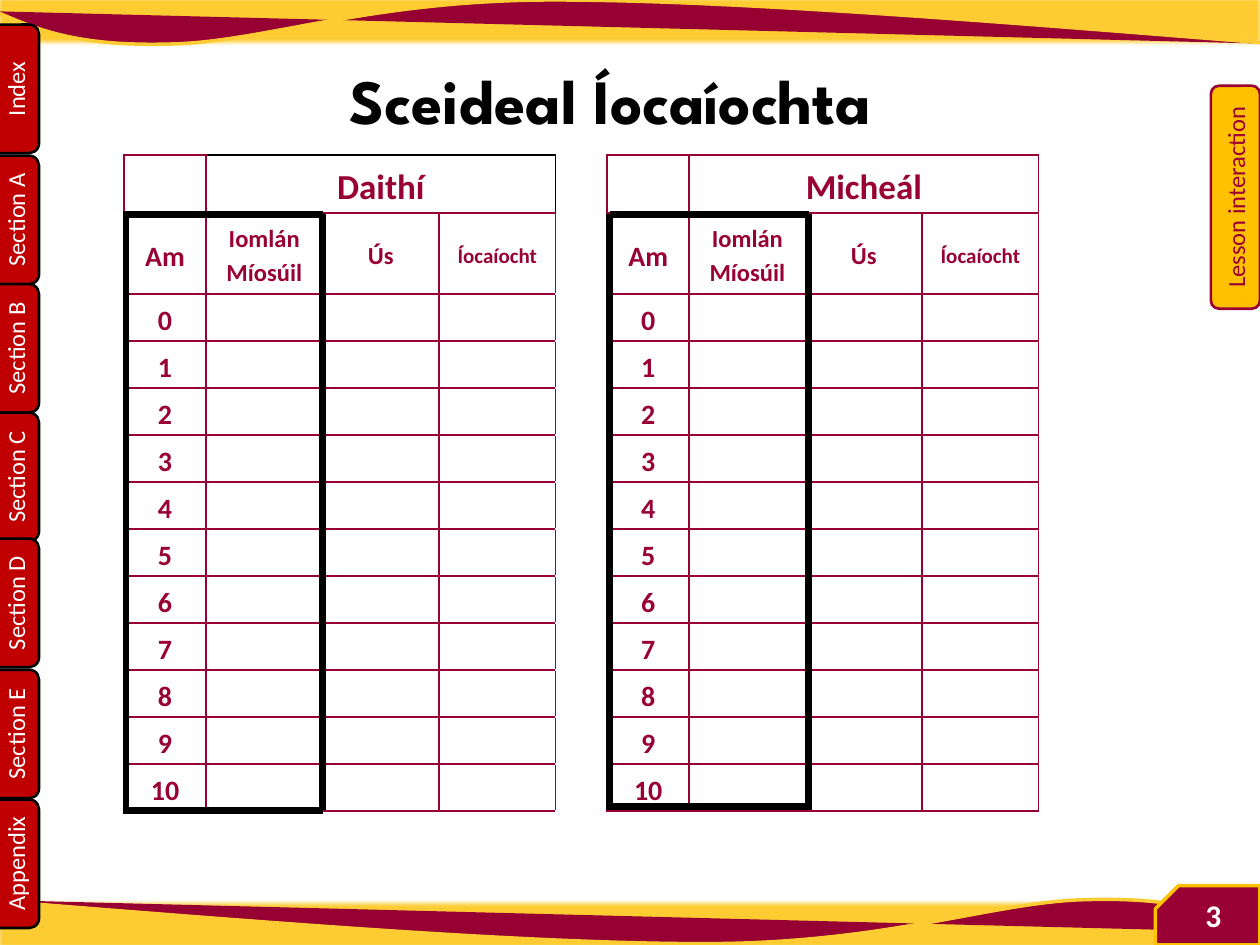
from lxml import etree
from pptx import Presentation
from pptx import util as u
from pptx.dml import color
from pptx.enum import shapes, text
from pptx.oxml import ns

COLUMNS, ROWS = 100, 75
CELL = u.Inches(10) // COLUMNS

MAROON = color.RGBColor(0x99, 0x00, 0x33)
WINE = color.RGBColor(0x97, 0x00, 0x33)
GOLD = color.RGBColor(0xFD, 0xCC, 0x33)
AMBER = color.RGBColor(0xFF, 0xC0, 0x00)
RED = color.RGBColor(0xC0, 0x00, 0x00)
BLACK = color.RGBColor(0x00, 0x00, 0x00)
WHITE = color.RGBColor(0xFF, 0xFF, 0xFF)

TABS = {"Index": 4.7, "Section A": 15.1, "Section B": 25.3, "Section C": 35.5,
        "Section D": 45.5, "Section E": 55.9, "Appendix": 66.2}
NAMES = ["Daithí", "Micheál"]
HEADINGS = [("Am", 16), ("Iomlán Míosúil", 14), ("Ús", 14), ("Íocaíocht", 12)]
TIMES = range(11)
GAP_COLUMN = len(HEADINGS)
BLOCK_STARTS = [0, GAP_COLUMN + 1]
BLOCK_WIDTHS = [6.5, 9.25, 9.25, 9.25]
GAP_WIDTH = 4.1
TABLE_HEIGHT = 52.1
HEADER_HEIGHTS = [4.6, 6.45]
BLACK_EDGES = {(0, 1, "T"), (0, 2, "T"), (0, 3, "T"), (0, 3, "R"), (0, GAP_COLUMN, "L")}

WAVE = [
    (101.5, 3.5),
    (80.1, 1.8), (58.6, 0), (43.9, 0),
    (29.2, 0), (20.8, 3.4), (13.4, 3.5),
    (6, 3.7), (2.8, 2.3), (-0.4, 0.9),
]


def grid(*cells):
    return [round(cell * CELL) for cell in cells]


def set_all(target, values):
    for name, value in values.items():
        setattr(target, name, value)


def paint(shape, fill, line=None, weight=1):
    shape.shadow.inherit = False
    shape.fill.solid()
    shape.fill.fore_color.rgb = fill
    if line is None:
        shape.line.fill.background()
    else:
        shape.line.color.rgb = line
        shape.line.width = u.Pt(weight)


def write(frame, words, size, ink, bold=False, font="Calibri", spacing=None):
    para = frame.paragraphs[0]
    set_all(para, {"alignment": text.PP_ALIGN.CENTER, "line_spacing": spacing})
    span = para.add_run()
    span.text = words
    set_all(span.font, {"name": font, "size": u.Pt(size), "bold": bold})
    span.font.color.rgb = ink


def add_box(page, kind, place, fill, line=None, weight=1, rotation=0):
    box = page.shapes.add_shape(kind, *grid(*place))
    box.rotation = rotation
    paint(box, fill, line, weight)
    return box


def add_label(page, place, words, anchor, ink, fill, line):
    box = add_box(page, shapes.MSO_SHAPE.ROUNDED_RECTANGLE, place, fill, line, 1.5, 270)
    set_all(box.text_frame, {"vertical_anchor": anchor, "word_wrap": True})
    write(box.text_frame, words, 14, ink)


def curve_segments(shape):
    segments = list(shape._element.iter(ns.qn("a:lnTo")))
    for first in range(0, len(segments), 3):
        curve = etree.Element(ns.qn("a:cubicBezTo"))
        segments[first].addprevious(curve)
        for segment in segments[first:first + 3]:
            curve.append(segment[0])
            segment.getparent().remove(segment)


def add_wave(page, turned):
    top = ROWS - 3.7 if turned else -0.5
    band = add_box(page, shapes.MSO_SHAPE.RECTANGLE, (-0.4, top, COLUMNS + 0.8, 4.2), GOLD)
    effects = band._element.spPr.find(ns.qn("a:effectLst"))
    etree.SubElement(effects, ns.qn("a:softEdge"), rad=str(u.Pt(2.5)))
    points = [(COLUMNS - 0.2 - x, ROWS - 0.1 - y) if turned else (x, y) for x, y in WAVE]
    points = [grid(*point) for point in points]
    builder = page.shapes.build_freeform(*points[0])
    builder.add_line_segments(points[1:], close=False)
    wave = builder.convert_to_shape()
    curve_segments(wave)
    paint(wave, WINE, GOLD, 2)


def add_line(page, start, end):
    line = page.shapes.add_connector(shapes.MSO_CONNECTOR.STRAIGHT, *grid(*start, *end))
    line.line.color.rgb = BLACK
    line.line.width = u.Pt(4)
    etree.SubElement(line._element.spPr, ns.qn("a:effectLst"))


def add_frame(page, left, edge, top, right, base, bottom):
    add_line(page, (left, top), (right, top))
    add_line(page, (left, base), (right, base))
    add_line(page, (edge, top), (edge, bottom))
    add_line(page, (right, top), (right, bottom))


def border(cell, side, ink):
    properties = cell._tc.get_or_add_tcPr()
    line = etree.SubElement(properties, ns.qn(f"a:ln{side}"), w=str(u.Pt(1)))
    fill = etree.SubElement(line, ns.qn("a:solidFill"))
    etree.SubElement(fill, ns.qn("a:srgbClr"), val=str(ink))


def format_cells(table):
    for row_index, row in enumerate(table.rows):
        for index, cell in enumerate(row.cells):
            for side in "LR" if index == GAP_COLUMN else "LRTB":
                border(cell, side, BLACK if (row_index, index, side) in BLACK_EDGES else MAROON)
            cell.fill.background()
            set_all(cell, {
                "margin_left": u.Inches(0.07), "margin_right": u.Inches(0.07),
                "margin_top": u.Inches(0.01), "margin_bottom": 0,
                "vertical_anchor": text.MSO_ANCHOR.MIDDLE,
            })
            cell.text_frame.paragraphs[0].font.size = u.Pt(14)


def fill_block(table, start, name):
    entries = [(0, start + 1, name, 20)]
    entries += [(1, start + i, words, size) for i, (words, size) in enumerate(HEADINGS)]
    entries += [(2 + time, start, str(time), 16) for time in TIMES]
    for row, column, words, size in entries:
        write(table.cell(row, column).text_frame, words, size, MAROON, True, spacing=1.15)
    table.cell(0, start + 1).merge(table.cell(0, start + len(HEADINGS) - 1))


def add_schedule(page):
    widths = BLOCK_WIDTHS + [GAP_WIDTH] + BLOCK_WIDTHS
    time_height = (TABLE_HEIGHT - sum(HEADER_HEIGHTS)) / len(TIMES)
    heights = HEADER_HEIGHTS + [time_height] * len(TIMES)
    place = grid(9.85, 12.3, sum(widths), TABLE_HEIGHT)
    table = page.shapes.add_table(len(heights), len(widths), *place).table
    set_all(table, {"first_row": False, "horz_banding": False})
    for column, width in zip(table.columns, grid(*widths)):
        column.width = width
    for row, height in zip(table.rows, grid(*heights)):
        row.height = height
    format_cells(table)
    for start, name in zip(BLOCK_STARTS, NAMES):
        fill_block(table, start, name)


def add_title(page):
    title = page.shapes.title
    set_all(title, dict(zip(("left", "top", "width", "height"), grid(16.15, 4.4, 64.6, 7.1))))
    set_all(title.text_frame, {"vertical_anchor": text.MSO_ANCHOR.TOP, "word_wrap": True,
                               "auto_size": text.MSO_AUTO_SIZE.NONE})
    write(title.text_frame, "Sceideal Íocaíochta", 36, BLACK, True, "League Spartan")


def add_page_number(page):
    box = add_box(page, shapes.MSO_SHAPE.SNIP_ROUND_RECTANGLE, (91.7, 70.3, 8.3, 4.7), MAROON, AMBER, 2)
    box.adjustments[0], box.adjustments[1] = 0, 0.39
    box._element.spPr.xfrm.set("flipH", "1")
    box.text_frame.vertical_anchor = text.MSO_ANCHOR.MIDDLE
    write(box.text_frame, "3", 18, WHITE, True)


def main():
    deck = Presentation()
    set_all(deck, {"slide_width": COLUMNS * CELL, "slide_height": ROWS * CELL})
    page = deck.slides.add_slide(deck.slide_layouts[5])
    for turned in (False, True):
        add_wave(page, turned)
    for words, top in TABS.items():
        add_label(page, (-4.35, top, 10.2, 4.7), words, text.MSO_ANCHOR.BOTTOM, WHITE, RED, BLACK)
    add_schedule(page)
    add_label(page, (89.2, 13.7, 17.7, 3.9), "Lesson interaction",
              text.MSO_ANCHOR.MIDDLE, MAROON, AMBER, MAROON)
    add_page_number(page)
    add_title(page)
    add_frame(page, 9.8, 10, 17, 25.6, 64.3, 64.3)
    add_frame(page, 48.4, 48.4, 17, 64.2, 64, 64.3)
    deck.save("out.pptx")


if __name__ == "__main__":
    main()
